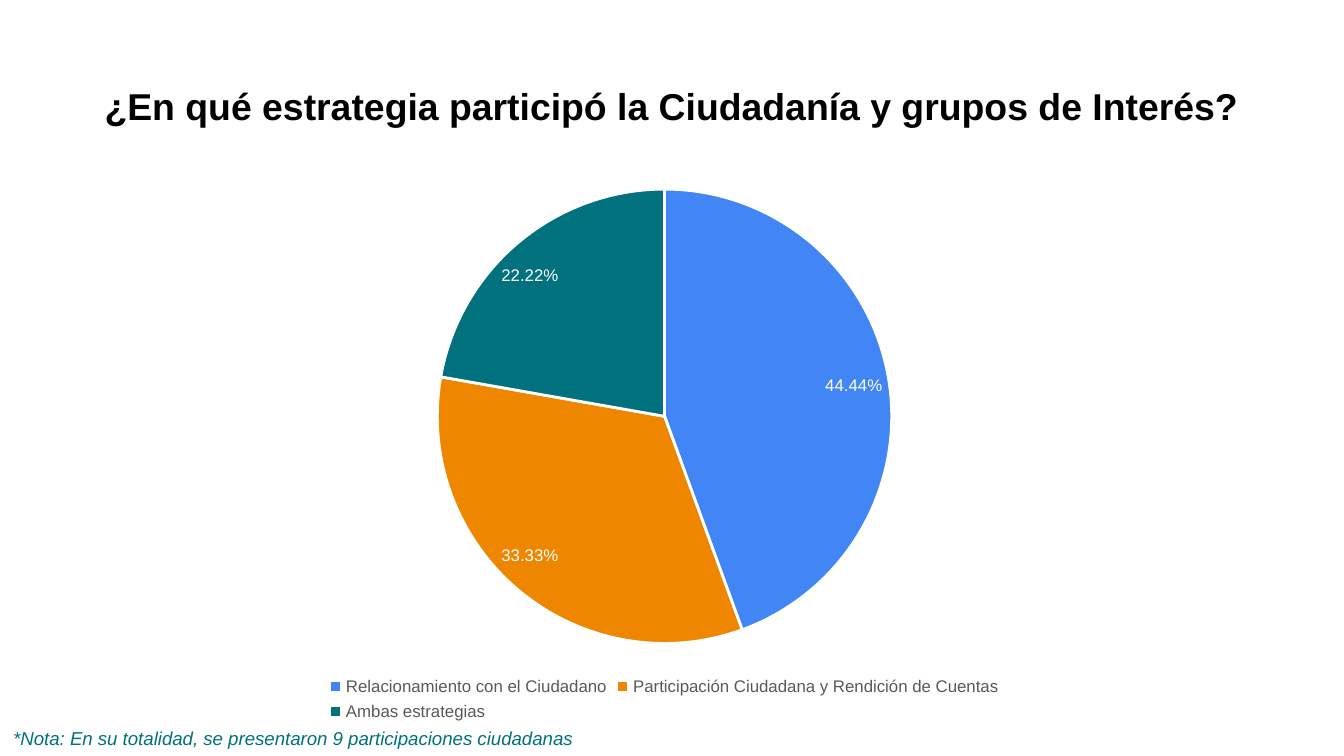
"""Build a slide with a pie chart of citizen participation by strategy."""
import pptx
import pptx.util
import pptx.chart.data
import pptx.dml.color
import pptx.enum.chart
import pptx.enum.text

Pt = pptx.util.Pt
FONT = "Arial"
WHITE = "FFFFFF"
SIZE = (720, 405)

TEXTS = [
    {
        "text": "¿En qué estrategia participó la Ciudadanía y grupos de Interés?",
        "at": (24.5, 35.3, 671, 45.4),
        "font": {"size": 20, "color": "000000", "bold": True},
        "align": pptx.enum.text.PP_ALIGN.CENTER,
        "top": 9,
    },
    {
        "text": "*Nota: En su totalidad, se presentaron 9 participaciones ciudadanas",
        "at": (0, 385.9, 600.5, 19.4),
        "font": {"size": 10, "color": "00717D", "italic": True},
        "align": pptx.enum.text.PP_ALIGN.LEFT,
        "top": 3.6,
    },
]

CHART_AT = (87.1, 91.4, 537.8, 298.1)
STRATEGIES = [
    ("Relacionamiento con el Ciudadano", 0.4444, "4285F4"),
    ("Participación Ciudadana y Rendición de Cuentas", 0.3333, "EF8600"),
    ("Ambas estrategias", 0.2222, "00717D"),
]


def color(value):
    return pptx.dml.color.RGBColor.from_string(value)


def set_all(target, values):
    for name, value in values.items():
        setattr(target, name, value)


def format_font(font, values):
    values = dict(values)
    font.color.rgb = color(values.pop("color"))
    values["size"] = Pt(values["size"])
    set_all(font, {"name": FONT, **values})


def add_text(page, item):
    box = page.shapes.add_textbox(*map(Pt, item["at"]))
    set_all(box.text_frame, {"word_wrap": True, "margin_top": Pt(item["top"])})
    para = box.text_frame.paragraphs[0]
    para.alignment = item["align"]
    span = para.add_run()
    span.text = item["text"]
    format_font(span.font, item["font"])


def add_pie(page):
    names, values, fills = zip(*STRATEGIES)
    data = pptx.chart.data.CategoryChartData(number_format="0.00%")
    data.categories = names
    data.add_series("Series 1", values)
    kind = pptx.enum.chart.XL_CHART_TYPE.PIE
    chart = page.shapes.add_chart(kind, *map(Pt, CHART_AT), data).chart
    set_all(chart, {"has_title": False, "has_legend": True})
    format_font(chart.font, {"size": 10, "color": "000000"})
    position = pptx.enum.chart.XL_LEGEND_POSITION.BOTTOM
    set_all(chart.legend, {"position": position, "include_in_layout": False})
    format_font(chart.legend.font, {"size": 9, "color": "595959"})

    plot = chart.plots[0]
    plot.vary_by_categories = True
    series = plot.series[0]
    for index, fill in enumerate(fills):
        shape = series.points[index].format
        shape.fill.solid()
        shape.fill.fore_color.rgb = color(fill)
        shape.line.color.rgb = color(WHITE)
        shape.line.width = Pt(1.5)
    labels = series.data_labels
    set_all(labels, {
        "show_value": True,
        "show_percentage": False,
        "number_format": "0.00%",
        "number_format_is_linked": False,
        "position": pptx.enum.chart.XL_LABEL_POSITION.BEST_FIT,
    })
    format_font(labels.font, {"size": 9, "color": WHITE})


def main():
    deck = pptx.Presentation()
    deck.slide_width, deck.slide_height = map(Pt, SIZE)
    page = deck.slides.add_slide(deck.slide_layouts[6])
    title, note = TEXTS
    add_text(page, title)
    add_pie(page)
    add_text(page, note)
    deck.save("out.pptx")


if __name__ == "__main__":
    main()
